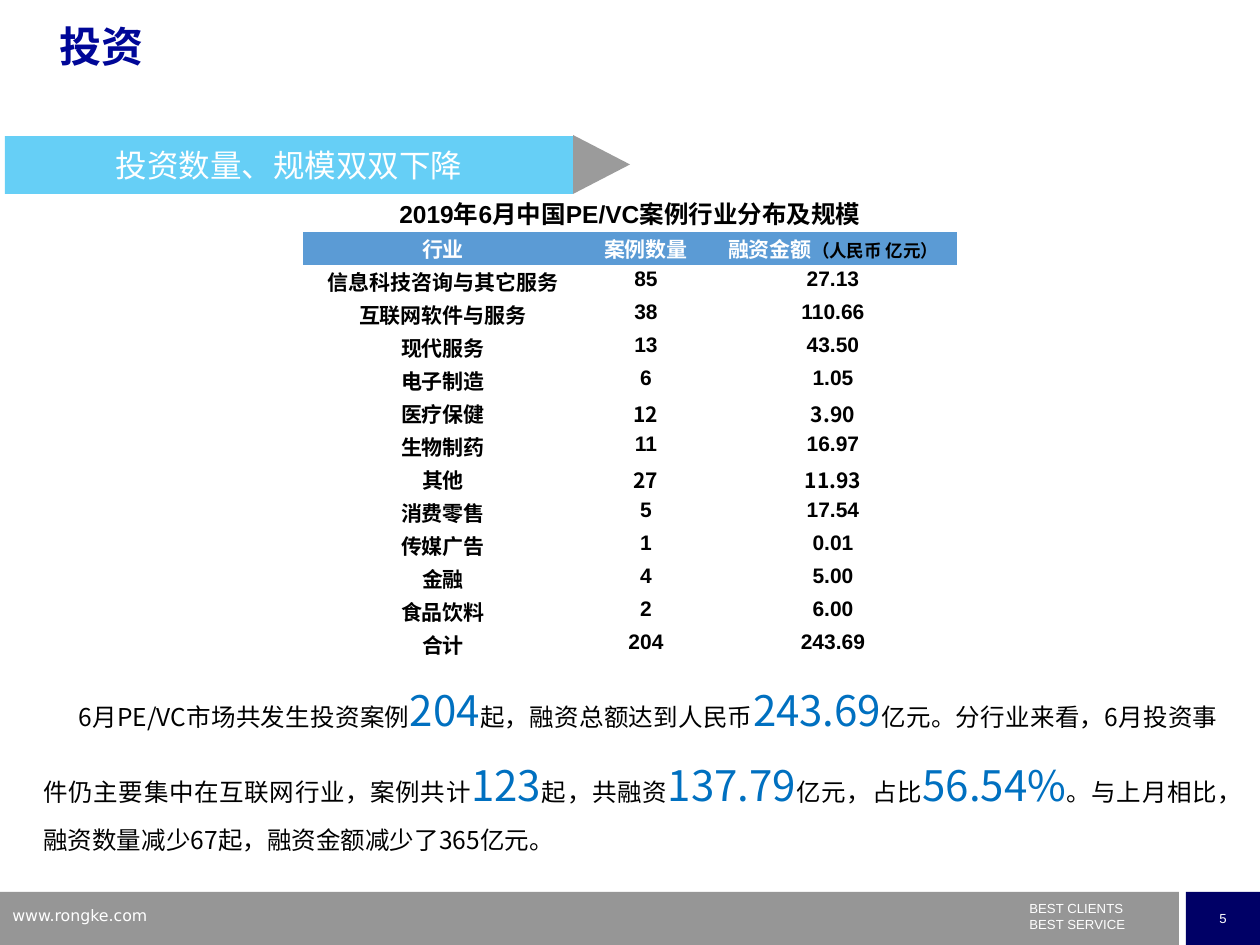
from dataclasses import dataclass

from lxml.etree import SubElement
from pptx import Presentation
from pptx.dml.color import RGBColor
from pptx.enum.shapes import MSO_SHAPE as Shape
from pptx.enum.text import MSO_ANCHOR as Anchor, PP_ALIGN as Align
from pptx.oxml.ns import qn
from pptx.util import Pt


@dataclass(frozen=True)
class Theme:
    latin: str = "Arial"
    cjk: str = "Noto Sans CJK SC"
    web: str = "DejaVu Sans"
    white: str = "FFFFFF"
    black: str = "000000"
    title: str = "000798"
    accent: str = "0070C0"
    banner: str = "00B0F0"
    arrow: str = "595959"
    header: str = "5B9BD5"
    footer: str = "969696"
    page: str = "000066"
    title_size: float = 24
    banner_size: float = 18
    body_size: float = 14
    figure_size: float = 24
    cell_size: float = 12
    unit_size: float = 10
    web_size: float = 9
    small_size: float = 7.5


T = Theme()
NO_STYLE = "{2D5ABB26-0587-4C30-8999-92F81FD0307C}"
COLUMNS = [280, 126, 248]
TITLE_ROW, ROW = 38, 33
TABLE_TITLE = "2019年6月中国PE/VC案例行业分布及规模"
HEADERS = ["行业", "案例数量", "融资金额"]
UNIT = "（人民币 亿元）"
INDUSTRIES = [
    ("信息科技咨询与其它服务", "85", "27.13"),
    ("互联网软件与服务", "38", "110.66"),
    ("现代服务", "13", "43.50"),
    ("电子制造", "6", "1.05"),
    ("医疗保健", "12", "3.90"),
    ("生物制药", "11", "16.97"),
    ("其他", "27", "11.93"),
    ("消费零售", "5", "17.54"),
    ("传媒广告", "1", "0.01"),
    ("金融", "4", "5.00"),
    ("食品饮料", "2", "6.00"),
    ("合计", "204", "243.69"),
]
CJK_FIGURES = {"医疗保健", "其他"}
SUMMARY = [
    ("6月PE/VC市场共发生投资案例", "204"),
    ("起，融资总额达到人民币", "243.69"),
    ("亿元。分行业来看，6月投资事件仍主要集中在互联网行业，案例共计", "123"),
    ("起，共融资", "137.79"),
    ("亿元，占比", "56.54%"),
    ("。与上月相比，融资数量减少67起，融资金额减少了365亿元。", ""),
]


def px(n):
    return round(n * 914400 / 126)


def add_run(p, text, size, color, font=T.latin, bold=False):
    r = p.add_run()
    r.text = text
    r.font.size = Pt(size)
    r.font.bold = bold
    r.font.name = font
    r.font.color.rgb = RGBColor.from_string(color)
    SubElement(r.font._element, qn("a:ea")).set("typeface", T.cjk)


def add_block(slide, kind, box, fill, alpha=None):
    s = slide.shapes.add_shape(kind, *map(px, box))
    s.shadow.inherit = False
    s.fill.solid()
    s.fill.fore_color.rgb = RGBColor.from_string(fill)
    s.line.fill.background()
    if alpha:
        color = s.fill._xPr.find(".//" + qn("a:srgbClr"))
        SubElement(color, qn("a:alpha")).set("val", str(alpha * 1000))
    return s


def add_label(s, text, size, font, wrap=True):
    tf = s.text_frame
    tf.word_wrap = wrap
    tf.vertical_anchor = Anchor.MIDDLE
    p = tf.paragraphs[0]
    p.alignment = Align.CENTER
    add_run(p, text, size, T.white, font)


def add_text(slide, box):
    tf = slide.shapes.add_textbox(*map(px, box)).text_frame
    tf.word_wrap = True
    return tf


def add_footer(slide):
    add_block(slide, Shape.RECTANGLE, (0, 892, 1179, 53), T.footer)
    page = add_block(slide, Shape.RECTANGLE, (1186, 892, 74, 53), T.page)
    add_label(page, "5", T.small_size, T.latin, wrap=False)
    tf = add_text(slide, (1017, 894, 189, 37))
    tf.text = "BEST CLIENTS\nBEST SERVICE"
    for p in tf.paragraphs:
        p.font.size = Pt(T.small_size)
        p.font.name = T.latin
        p.font.color.rgb = RGBColor.from_string(T.white)
    p = add_text(slide, (0, 900, 302, 33)).paragraphs[0]
    add_run(p, "www.rongke.com", T.web_size, T.white, T.web)


def add_title(slide, text):
    s = slide.shapes.title
    s.left, s.top, s.width, s.height = map(px, (47, 20, 1134, 88))
    tf = s.text_frame
    tf.vertical_anchor = Anchor.TOP
    p = tf.paragraphs[0]
    p.alignment = Align.LEFT
    p.line_spacing = 0.9
    add_run(p, text, T.title_size, T.title, bold=True)


def add_banner(slide, text):
    s = add_block(slide, Shape.RECTANGLE, (5, 136, 568, 58), T.banner, 60)
    add_label(s, text, T.banner_size, T.cjk)
    tip = add_block(slide, Shape.ISOSCELES_TRIANGLE, (572, 136, 59, 57), T.arrow, 60)
    tip.rotation = 90


def fill_cell(cell, text, size=T.cell_size, color=T.black, font=T.latin, fill=None):
    cell.margin_left = cell.margin_right = cell.margin_top = px(1)
    cell.margin_bottom = px(6)
    cell.vertical_anchor = Anchor.MIDDLE
    if fill:
        cell.fill.solid()
        cell.fill.fore_color.rgb = RGBColor.from_string(fill)
    else:
        cell.fill.background()
    p = cell.text_frame.paragraphs[0]
    p.alignment = Align.CENTER
    add_run(p, text, size, color, font, bold=True)
    return p


def add_industry_table(slide):
    rows = len(INDUSTRIES) + 2
    box = (303, 194, sum(COLUMNS), TITLE_ROW + ROW * (rows - 1))
    frame = slide.shapes.add_table(rows, len(COLUMNS), *map(px, box))
    table = frame.table
    table.first_row = table.horz_banding = False
    frame._element.find(".//" + qn("a:tableStyleId")).text = NO_STYLE
    for column, width in zip(table.columns, COLUMNS):
        column.width = px(width)
    for i, row in enumerate(table.rows):
        row.height = px(ROW if i else TITLE_ROW)
    table.cell(0, 0).merge(table.cell(0, len(COLUMNS) - 1))
    fill_cell(table.cell(0, 0), TABLE_TITLE, T.body_size)
    for c, text in enumerate(HEADERS):
        p = fill_cell(table.cell(1, c), text, color=T.white, fill=T.header)
    add_run(p, UNIT, T.unit_size, T.black, T.cjk, bold=True)
    for i, values in enumerate(INDUSTRIES, 2):
        font = T.cjk if values[0] in CJK_FIGURES else T.latin
        for c, text in enumerate(values):
            fill_cell(table.cell(i, c), text, font=font, fill=T.white)


def add_summary(slide):
    p = add_text(slide, (31, 653, 1199, 254)).paragraphs[0]
    p.alignment = Align.JUSTIFY
    p.line_spacing = 1.5
    p._p.get_or_add_pPr().set("indent", str(px(35)))
    for text, figure in SUMMARY:
        add_run(p, text, T.body_size, T.black, T.cjk)
        if figure:
            add_run(p, figure, T.figure_size, T.accent, T.cjk)


def main():
    prs = Presentation()
    prs.slide_width, prs.slide_height = px(1260), px(945)
    slide = prs.slides.add_slide(prs.slide_layouts[5])
    add_footer(slide)
    add_banner(slide, "投资数量、规模双双下降")
    add_summary(slide)
    add_title(slide, "投资")
    add_industry_table(slide)
    prs.save("out.pptx")


if __name__ == "__main__":
    main()
